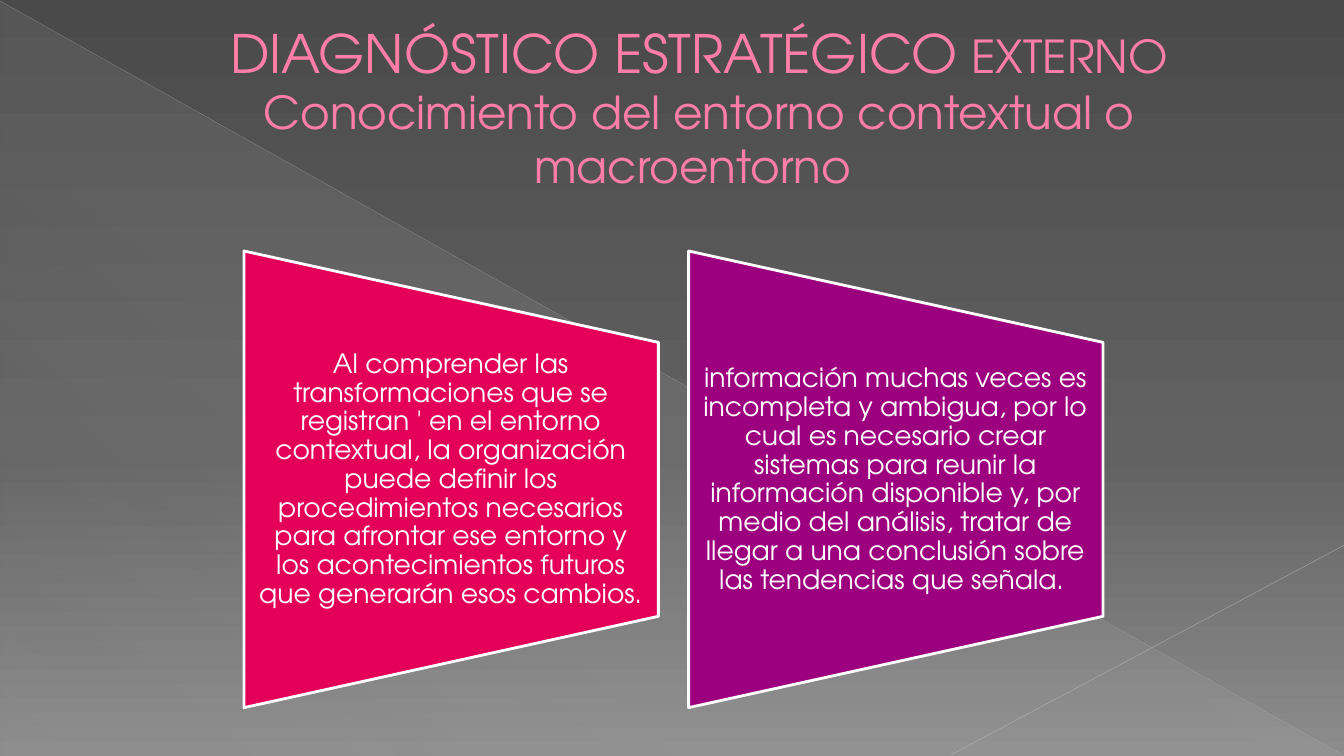
"""Build the slide on the external strategic diagnosis."""
from lxml import etree
from pptx import Presentation
from pptx.dml.color import RGBColor
from pptx.enum.shapes import MSO_CONNECTOR, MSO_SHAPE
from pptx.enum.text import MSO_ANCHOR, PP_ALIGN
from pptx.oxml import parse_xml
from pptx.oxml.ns import nsdecls, qn
from pptx.util import Inches, Pt

FONT = "TeX Gyre Adventor"
STRAIGHT = MSO_CONNECTOR.STRAIGHT
TRIANGLE = MSO_SHAPE.RIGHT_TRIANGLE
TRAPEZOID = MSO_SHAPE.FLOWCHART_MANUAL_OPERATION
MIDDLE, CENTER = MSO_ANCHOR.MIDDLE, PP_ALIGN.CENTER


def set_gradient(fill, element, stops, angle):
    fill.gradient()
    gradient = element.find(".//" + qn("a:gradFill"))
    stop_xml = "".join(
        f'<a:gs pos="{position * 1000}"><a:srgbClr val="{color}">'
        f'<a:alpha val="{opacity * 1000}"/></a:srgbClr></a:gs>'
        for position, color, opacity in stops)
    gradient.getparent().replace(gradient, parse_xml(
        f'<a:gradFill rotWithShape="1" {nsdecls("a")}><a:gsLst>{stop_xml}</a:gsLst>'
        f'<a:lin ang="{angle * 60000}" scaled="0"/></a:gradFill>'))


def add_text(box, runs, color, margins=(0.1, 0.05, 0.1, 0.05), spacing=None,
             after=None, indent=0, outline=None):
    left, top, width, height = (Inches(value) for value in box)
    frame = slide.shapes.add_textbox(left, top, width, height).text_frame
    frame.word_wrap = True
    frame.vertical_anchor = MIDDLE
    (frame.margin_left, frame.margin_top,
     frame.margin_right, frame.margin_bottom) = (Inches(value) for value in margins)
    paragraph = frame.paragraphs[0]
    paragraph.alignment = CENTER
    paragraph.line_spacing = spacing
    if after:
        paragraph.space_after = Pt(after)
    if indent:
        properties = paragraph._p.get_or_add_pPr()
        properties.set("marL", str(Inches(indent)))
        properties.set("indent", "0")
    for text, size in runs:
        for number, line in enumerate(text.split("\n")):
            if number:
                paragraph.add_line_break()
            run = paragraph.add_run()
            run.text = line
            run.font.name = FONT
            run.font.size = Pt(size)
            run.font.color.rgb = RGBColor.from_string(color)
            if outline:
                run.font._element.insert(0, parse_xml(
                    f'<a:ln w="{Pt(0.5)}" {nsdecls("a")}><a:solidFill>'
                    f'<a:srgbClr val="{outline}"/></a:solidFill></a:ln>'))


presentation = Presentation()
presentation.slide_width = Inches(13.33)
presentation.slide_height = Inches(7.5)
slide = presentation.slides.add_slide(presentation.slide_layouts[6])

set_gradient(slide.background.fill, slide.element,
             [(0, "4A4A4A", 100), (60, "626262", 100), (100, "8C8C8C", 100)], 90)

corner = slide.shapes.add_shape(
    TRIANGLE, Inches(0.01), Inches(0.02), Inches(13.31), Inches(7.48))
corner.shadow.inherit = False
corner.line.fill.background()
set_gradient(corner.fill, corner.element,
             [(0, "D2D2D2", 10), (70, "D2D2D2", 8), (100, "D2D2D2", 1)], 133)

for x1, y1, x2, y2, color, width, opacity in [
    (0, 0.01, 13.32, 7.49, "BFBFBF", 0.39, 35),
    (13.33, 5.41, 9.43, 7.49, "C6C6C6", 0.47, 45),
]:
    ray = slide.shapes.add_connector(
        STRAIGHT, Inches(x1), Inches(y1), Inches(x2), Inches(y2))
    ray.line.width = Pt(width)
    ray.line.color.rgb = RGBColor.from_string(color)
    ray_color = ray.element.spPr.find(".//" + qn("a:srgbClr"))
    etree.SubElement(ray_color, qn("a:alpha")).set("val", str(opacity * 1000))
    etree.SubElement(ray.element.spPr, qn("a:effectLst"))

add_text((0.67, 0.29, 12, 1.53),
         [("DIAGNÓSTICO ESTRATÉGICO ", 37.8),
          ("EXTERNO\nConocimiento del entorno contextual o macroentorno ", 32.4)],
         "FF7DA7", indent=0.53, outline="B12761")

ideas = [
    ("E40059", "Al comprender las transformaciones que se registran ' en el entorno "
     "contextual, la organización puede definir los procedimientos necesarios para "
     "afrontar ese entorno y los acontecimientos futuros que generarán esos cambios."),
    ("9C007F", "información muchas veces es incompleta y ambigua, por lo cual es "
     "necesario crear sistemas para reunir la información disponible y, por medio del "
     "análisis, tratar de llegar a una conclusión sobre las tendencias que señala. "),
]
for column, (color, idea) in enumerate(ideas):
    left = 2.21 + column * 4.41
    panel = slide.shapes.add_shape(
        TRAPEZOID, Inches(left), Inches(2.7), Inches(4.53), Inches(4.11))
    panel.rotation = 270
    panel.shadow.inherit = False
    panel.fill.solid()
    panel.fill.fore_color.rgb = RGBColor.from_string(color)
    panel.line.color.rgb = RGBColor.from_string("FFFFFF")
    panel.line.width = Pt(2)
    add_text((left + 0.21, 3.4, 4.11, 2.72), [(idea, 19)], "FFFFFF",
             margins=(0.13, 0, 0.14, 0), spacing=0.9, after=6.65)

presentation.save("out.pptx")
